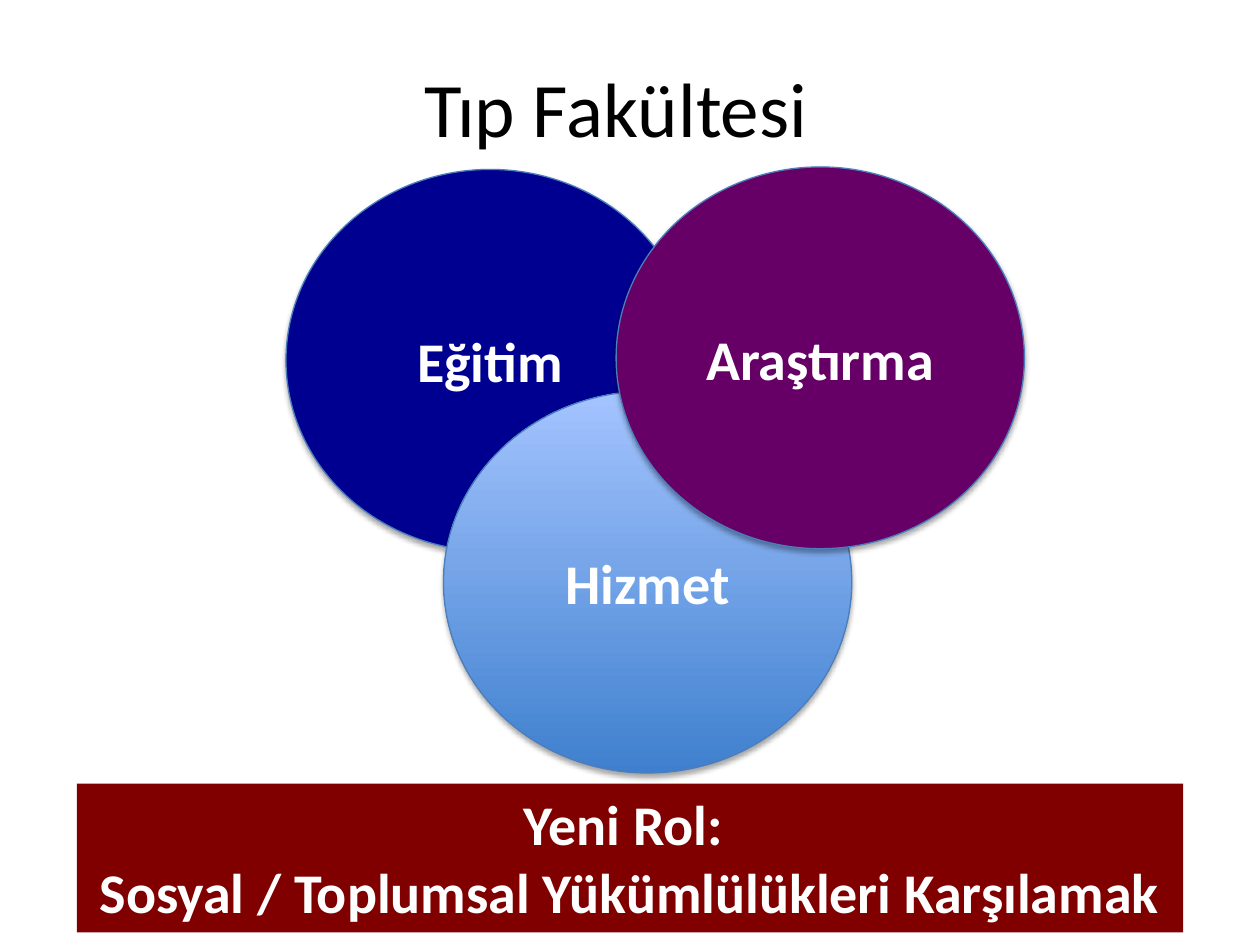
from pptx import Presentation
from pptx.dml.color import RGBColor
from pptx.enum.shapes import MSO_SHAPE
from pptx.enum.text import MSO_ANCHOR, MSO_AUTO_SIZE, PP_ALIGN
from pptx.util import Inches, Pt

OVAL = MSO_SHAPE.OVAL
CENTER = PP_ALIGN.CENTER
MIDDLE = MSO_ANCHOR.MIDDLE

BLACK = RGBColor(0x00, 0x00, 0x00)
WHITE = RGBColor(0xFF, 0xFF, 0xFF)
NAVY = RGBColor(0x00, 0x00, 0x90)
PURPLE = RGBColor(0x66, 0x00, 0x66)
MAROON = RGBColor(0x80, 0x00, 0x00)
DEEP_BLUE = RGBColor(0x3F, 0x80, 0xCE)
PALE_BLUE = RGBColor(0xA4, 0xC4, 0xFF)
OUTLINE = RGBColor(0x4B, 0x7E, 0xBC)

# Content
TITLE = "Tıp Fakültesi"
# Label, centre x, centre y, fill colours (bottom to top when there are two)
DUTIES = [
    ("Eğitim", 3.89, 2.86, [NAVY]),
    ("Hizmet", 5.14, 4.62, [DEEP_BLUE, PALE_BLUE]),
    ("Araştırma", 6.51, 2.84, [PURPLE]),
]
NEW_ROLE = "Yeni Rol: \nSosyal / Toplumsal Yükümlülükleri Karşılamak"

# Layout in inches
SLIDE_SIZE = (10, 7.5)
TITLE_BOX = (0.39, 0.22, 9, 1.25)
OVAL_WIDTH, OVAL_HEIGHT = 3.24, 3.03
ROLE_BOX = (0.61, 6.22, 8.78, 1.18)


def inches(values):
    return [Inches(value) for value in values]


def write(frame, text, size, color, bold):
    frame.text = text
    for paragraph in frame.paragraphs:
        paragraph.alignment = CENTER
        for run in paragraph.runs:
            run.font.name = "Calibri"
            run.font.size = Pt(size)
            run.font.bold = bold
            run.font.color.rgb = color


def paint(fill, colors):
    if len(colors) == 1:
        fill.solid()
        fill.fore_color.rgb = colors[0]
        return
    fill.gradient()
    fill.gradient_angle = 90
    for stop, color in zip(fill.gradient_stops, colors):
        stop.color.rgb = color


def add_duty(slide, label, center_x, center_y, colors):
    box = (center_x - OVAL_WIDTH / 2, center_y - OVAL_HEIGHT / 2,
           OVAL_WIDTH, OVAL_HEIGHT)
    # The theme's soft shadow is kept on the ovals
    oval = slide.shapes.add_shape(OVAL, *inches(box))
    paint(oval.fill, colors)
    oval.line.color.rgb = OUTLINE
    oval.line.width = Pt(0.75)
    oval.text_frame.vertical_anchor = MIDDLE
    write(oval.text_frame, label, 32, WHITE, True)


def main():
    deck = Presentation()
    deck.slide_width, deck.slide_height = inches(SLIDE_SIZE)
    slide = deck.slides.add_slide(deck.slide_layouts[5])

    # Title
    title = slide.shapes.title
    title.left, title.top, title.width, title.height = inches(TITLE_BOX)
    title.text_frame.vertical_anchor = MIDDLE
    write(title.text_frame, TITLE, 44, BLACK, False)

    # Overlapping ovals, back to front
    for duty in DUTIES:
        add_duty(slide, *duty)

    # Banner with the new role
    role = slide.shapes.add_textbox(*inches(ROLE_BOX))
    paint(role.fill, [MAROON])
    role.text_frame.word_wrap = False
    role.text_frame.auto_size = MSO_AUTO_SIZE.SHAPE_TO_FIT_TEXT
    write(role.text_frame, NEW_ROLE, 32, WHITE, True)

    deck.save("out.pptx")


if __name__ == "__main__":
    main()
